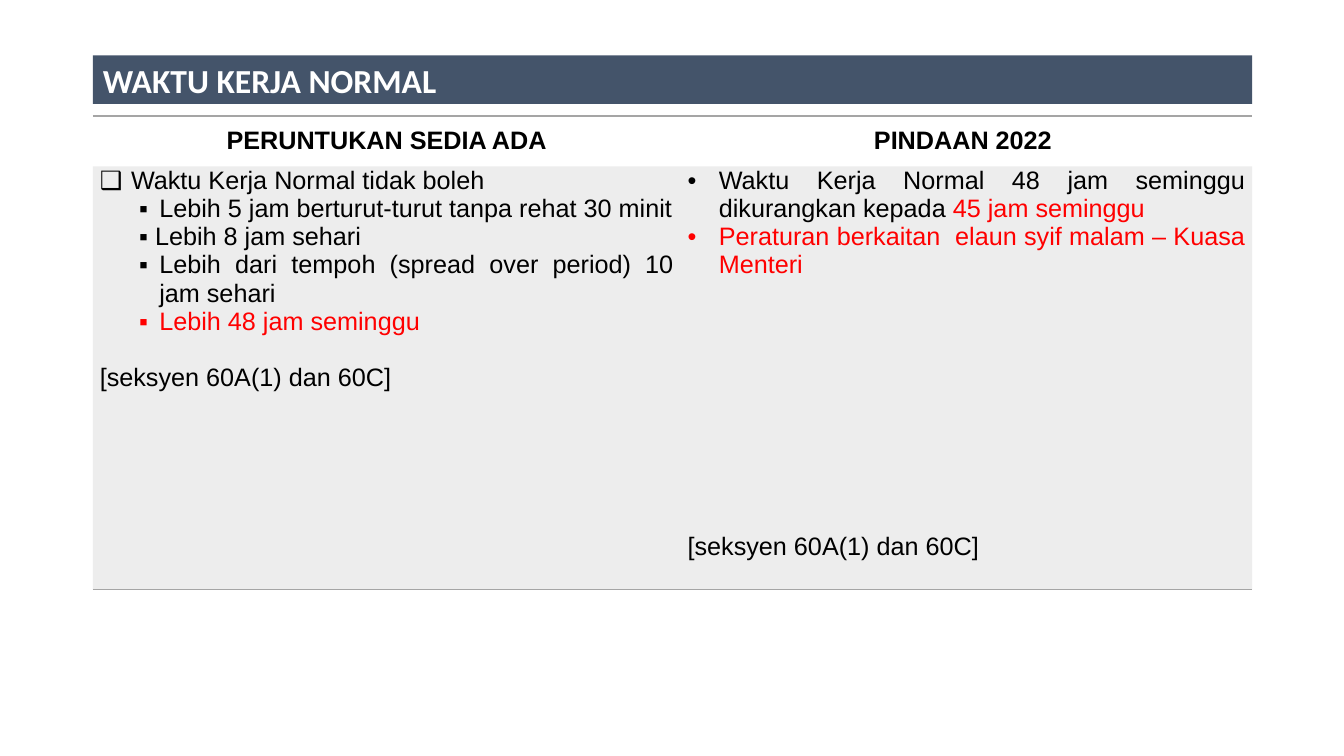
from dataclasses import dataclass

from lxml import etree
from pptx import Presentation
from pptx.dml.color import RGBColor
from pptx.enum.text import MSO_ANCHOR, MSO_AUTO_SIZE, PP_ALIGN
from pptx.oxml.ns import qn
from pptx.util import Inches, Pt

LEFT, CENTER, JUSTIFY = PP_ALIGN.LEFT, PP_ALIGN.CENTER, PP_ALIGN.JUSTIFY
TOP, MIDDLE = MSO_ANCHOR.TOP, MSO_ANCHOR.MIDDLE
NO_AUTOFIT = MSO_AUTO_SIZE.NONE

COLORS = {
    "banner": "44546A",
    "rule": "A5A5A5",
    "text": "000000",
    "change": "FF0000",
    "title": "FFFFFF",
}
TITLE_ONLY_LAYOUT = 5
PLAIN_TABLE_STYLE = "{2D5ABB26-0587-4C30-8999-92F81FD0307C}"
MARGIN, CONTENT_WIDTH = 0.92, 11.5
COLUMN_WIDTHS = (5.83, 5.67)
ROW_HEIGHTS = (0.5, 4.2)
LINE_HEIGHT = 20.1  # points, one line of 18 pt Arial


@dataclass(frozen=True)
class Span:
    text: str
    color: str = "text"
    bold: bool = False


@dataclass(frozen=True)
class Line:
    spans: tuple[Span, ...]
    bullet: str = ""
    margin: float = 0
    indent: float = 0
    lines_before: int = 0
    alignment: PP_ALIGN = JUSTIFY


def heading(text: str) -> Line:
    return Line((Span(text, bold=True),), alignment=CENTER)


def main_point(bullet: str, *spans: Span) -> Line:
    return Line(spans, bullet, 0.31, -0.31)


def sub_point(text: str, color: str = "text") -> Line:
    return Line((Span(text, color),), "▪", 0.59, -0.2)


def section(lines_before: int) -> Line:
    return Line((Span("[seksyen 60A(1) dan 60C]"),), lines_before=lines_before)


HEADINGS = ([heading("PERUNTUKAN SEDIA ADA")], [heading("PINDAAN 2022 ")])
PROVISIONS = (
    [
        main_point("❑", Span("Waktu Kerja Normal tidak boleh")),
        sub_point("Lebih 5 jam berturut-turut tanpa rehat 30 minit"),
        Line((Span(" Lebih 8 jam sehari"),), "▪", 0.39),
        sub_point("Lebih dari tempoh (spread over period) 10 jam sehari"),
        sub_point("Lebih 48 jam seminggu", "change"),
        section(1),
    ],
    [
        main_point(
            "•",
            Span("Waktu Kerja Normal 48 jam seminggu dikurangkan kepada "),
            Span("45 jam seminggu", "change"),
        ),
        main_point("•", Span("Peraturan berkaitan  elaun syif malam – Kuasa Menteri  ", "change")),
        section(9),
    ],
)


def color_of(name: str) -> RGBColor:
    return RGBColor.from_string(COLORS[name])


def add_span(paragraph, span: Span, size: int, font_name: str) -> None:
    run = paragraph.add_run()
    run.text = span.text
    font = run.font
    font.name, font.size, font.bold = font_name, Pt(size), span.bold
    font.color.rgb = color_of(span.color)


def write_lines(text_frame, lines: list[Line]) -> None:
    for index, line in enumerate(lines):
        paragraph = text_frame.add_paragraph() if index else text_frame.paragraphs[0]
        paragraph.alignment = line.alignment
        paragraph.space_before = Pt(line.lines_before * LINE_HEIGHT)
        if line.bullet:
            properties = paragraph._p.get_or_add_pPr()
            properties.set("marL", str(Inches(line.margin)))
            properties.set("indent", str(Inches(line.indent)))
            etree.SubElement(properties, qn("a:buFont"), typeface="Arial")
            etree.SubElement(properties, qn("a:buChar"), char=line.bullet)
        for span in line.spans:
            add_span(paragraph, span, 18, "Arial")


def add_border(cell, tag: str) -> None:
    border = etree.SubElement(cell._tc.get_or_add_tcPr(), qn(tag), w=str(Pt(1)))
    fill = etree.SubElement(border, qn("a:solidFill"))
    etree.SubElement(fill, qn("a:srgbClr"), val=COLORS["rule"])


def fill_translucent(cell) -> None:
    cell.fill.solid()
    cell.fill.fore_color.rgb = color_of("rule")
    color = cell._tc.tcPr.find(qn("a:solidFill")).find(qn("a:srgbClr"))
    etree.SubElement(color, qn("a:alpha"), val="20000")


def format_cell(cell, inset: float, anchor: MSO_ANCHOR) -> None:
    cell.margin_left = cell.margin_right = Inches(inset)
    cell.margin_top = cell.margin_bottom = 0
    cell.vertical_anchor = anchor


def add_comparison(slide) -> None:
    table = slide.shapes.add_table(
        2, 2, Inches(MARGIN), Inches(1.15), Inches(CONTENT_WIDTH), Inches(sum(ROW_HEIGHTS))
    ).table
    table.first_row = table.horz_banding = False
    table._tbl.tblPr.find(qn("a:tableStyleId")).text = PLAIN_TABLE_STYLE
    for row, height in zip(table.rows, ROW_HEIGHTS):
        row.height = Inches(height)
    for index, width in enumerate(COLUMN_WIDTHS):
        table.columns[index].width = Inches(width)

        header = table.cell(0, index)
        format_cell(header, 0.08, MIDDLE)
        add_border(header, "a:lnT")
        header.fill.background()
        write_lines(header.text_frame, HEADINGS[index])

        body = table.cell(1, index)
        format_cell(body, 0.07, TOP)
        add_border(body, "a:lnB")
        fill_translucent(body)
        write_lines(body.text_frame, PROVISIONS[index])


def add_title(slide) -> None:
    title = slide.shapes.title
    title.left, title.top = Inches(MARGIN), Inches(0.55)
    title.width, title.height = Inches(CONTENT_WIDTH), Inches(0.48)
    title.fill.solid()
    title.fill.fore_color.rgb = color_of("banner")
    text_frame = title.text_frame
    text_frame.auto_size = NO_AUTOFIT
    text_frame.vertical_anchor = MIDDLE
    paragraph = text_frame.paragraphs[0]
    paragraph.alignment = LEFT
    add_span(paragraph, Span("WAKTU KERJA NORMAL", "title", True), 24, "Calibri")


def main() -> None:
    presentation = Presentation()
    presentation.slide_width, presentation.slide_height = Inches(13.33), Inches(7.5)
    slide = presentation.slides.add_slide(presentation.slide_layouts[TITLE_ONLY_LAYOUT])
    add_title(slide)
    add_comparison(slide)
    presentation.save("out.pptx")


if __name__ == "__main__":
    main()
